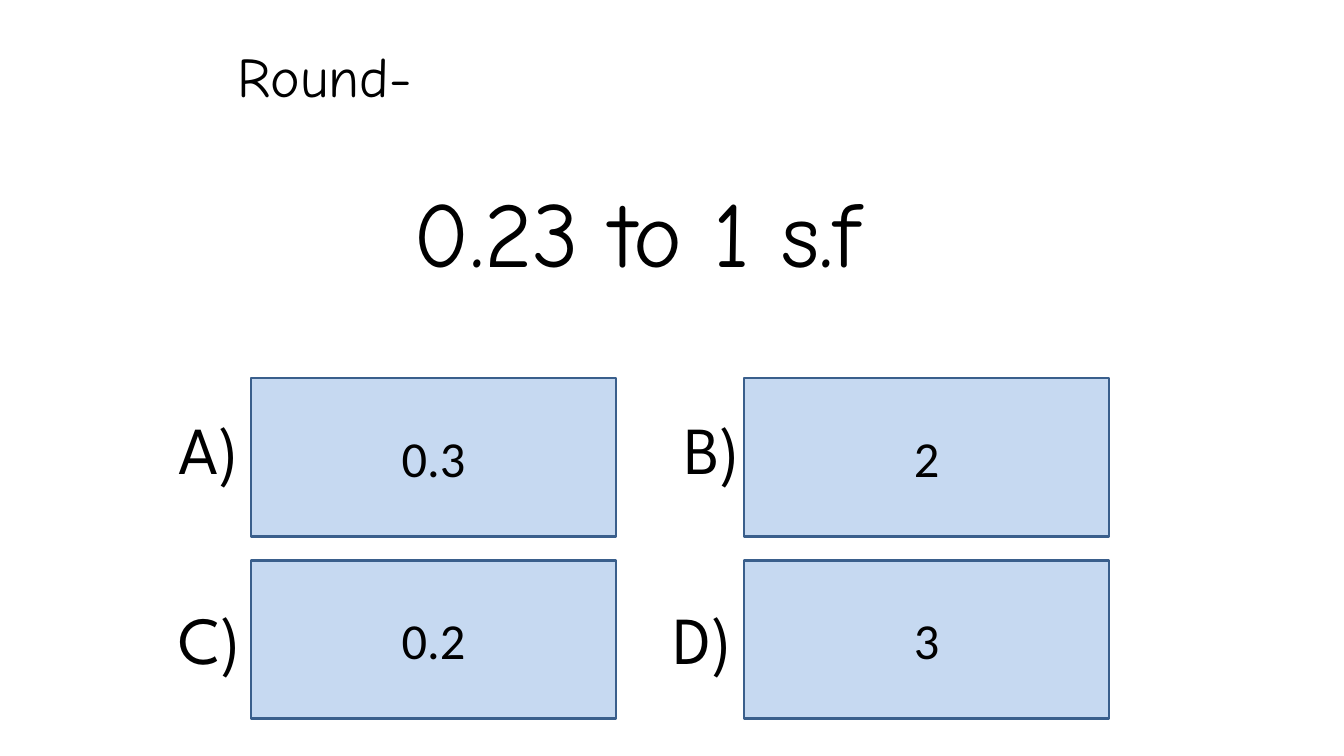
from dataclasses import dataclass

from pptx import Presentation
from pptx import util as u
from pptx.dml.color import RGBColor
from pptx.enum import shapes, text


@dataclass(frozen=True)
class Theme:
    ink: RGBColor = RGBColor(0x00, 0x00, 0x00)
    fill: RGBColor = RGBColor(0xC6, 0xD9, 0xF1)
    edge: RGBColor = RGBColor(0x3A, 0x5F, 0x8C)
    body: str = "Calibri"
    label: str = "League Spartan"
    prompt: str = "Comic Neue"
    answer_pt: int = 36
    label_pt: int = 48
    prompt_pt: int = 40
    sum_pt: int = 66
    gap_pt: int = 48


@dataclass(frozen=True)
class Choice:
    label: str
    answer: str
    col: int
    row: int
    left: float
    width: float


THEME = Theme()
COLS = (2.49, 7.38)
ROWS = (3.75, 5.56)
LABEL_TOPS = (3.99, 5.88)
CHOICES = (
    Choice("A)", "0.3", 0, 0, 1.67, 0.95),
    Choice("B)", "2", 1, 0, 6.69, 0.84),
    Choice("C)", "0.2", 0, 1, 1.67, 1.0),
    Choice("D)", "3", 1, 1, 6.58, 0.95),
)


def write(para, words: str, face: str, size: int) -> None:
    para.text = words
    font = para.font
    font.name, font.size = face, u.Pt(size)
    font.color.rgb = THEME.ink


def add_text(slide, left: float, top: float, width: float, height: float, wrap: bool):
    box = slide.shapes.add_textbox(
        u.Inches(left), u.Inches(top), u.Inches(width), u.Inches(height))
    frame = box.text_frame
    frame.word_wrap = wrap
    frame.auto_size = text.MSO_AUTO_SIZE.SHAPE_TO_FIT_TEXT
    return frame


def add_answer(slide, choice: Choice) -> None:
    box = slide.shapes.add_shape(
        shapes.MSO_SHAPE.RECTANGLE, u.Inches(COLS[choice.col]),
        u.Inches(ROWS[choice.row]), u.Inches(3.62), u.Inches(1.57))
    box.shadow.inherit = False
    box.fill.solid()
    box.fill.fore_color.rgb = THEME.fill
    box.line.color.rgb = THEME.edge
    box.line.width = u.Pt(2)
    frame = box.text_frame
    frame.vertical_anchor = text.MSO_ANCHOR.MIDDLE
    para = frame.paragraphs[0]
    para.alignment = text.PP_ALIGN.CENTER
    write(para, choice.answer, THEME.body, THEME.answer_pt)


def add_label(slide, choice: Choice) -> None:
    frame = add_text(slide, choice.left, LABEL_TOPS[choice.row], choice.width, 0.91, False)
    write(frame.paragraphs[0], choice.label, THEME.label, THEME.label_pt)


def add_prompt(slide) -> None:
    frame = add_text(slide, 2.26, 0.36, 8.11, 2.56, True)
    write(frame.paragraphs[0], "Round-", THEME.prompt, THEME.prompt_pt)
    para = frame.add_paragraph()
    para.alignment = text.PP_ALIGN.CENTER
    para.space_before = u.Pt(THEME.gap_pt)
    write(para, "0.23 to 1 s.f", THEME.prompt, THEME.sum_pt)


def main() -> None:
    deck = Presentation()
    deck.slide_width, deck.slide_height = u.Inches(13.33), u.Inches(7.5)
    slide = deck.slides.add_slide(deck.slide_layouts[6])
    for choice in CHOICES:
        add_answer(slide, choice)
    for choice in CHOICES:
        add_label(slide, choice)
    add_prompt(slide)
    deck.save("out.pptx")


if __name__ == "__main__":
    main()
